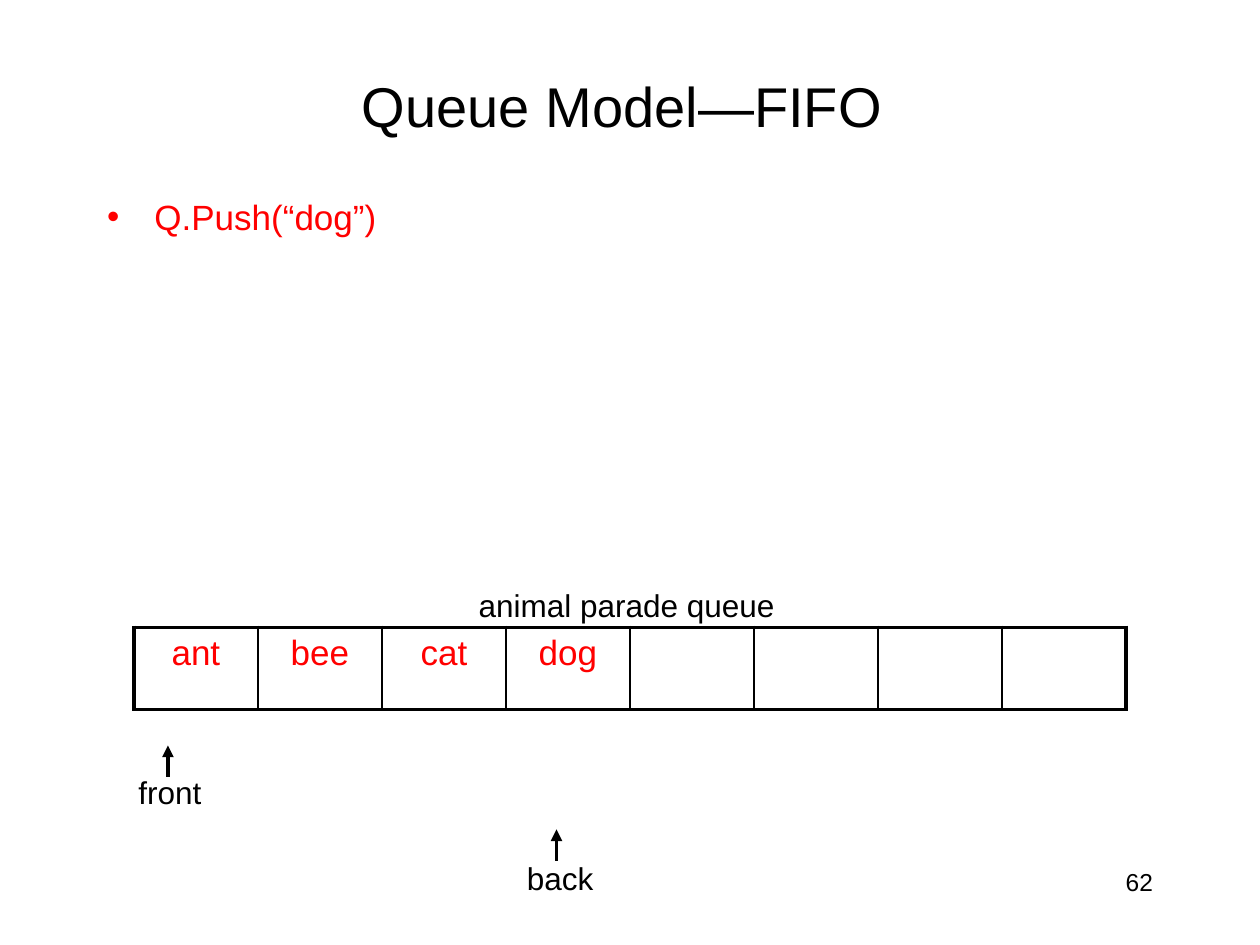
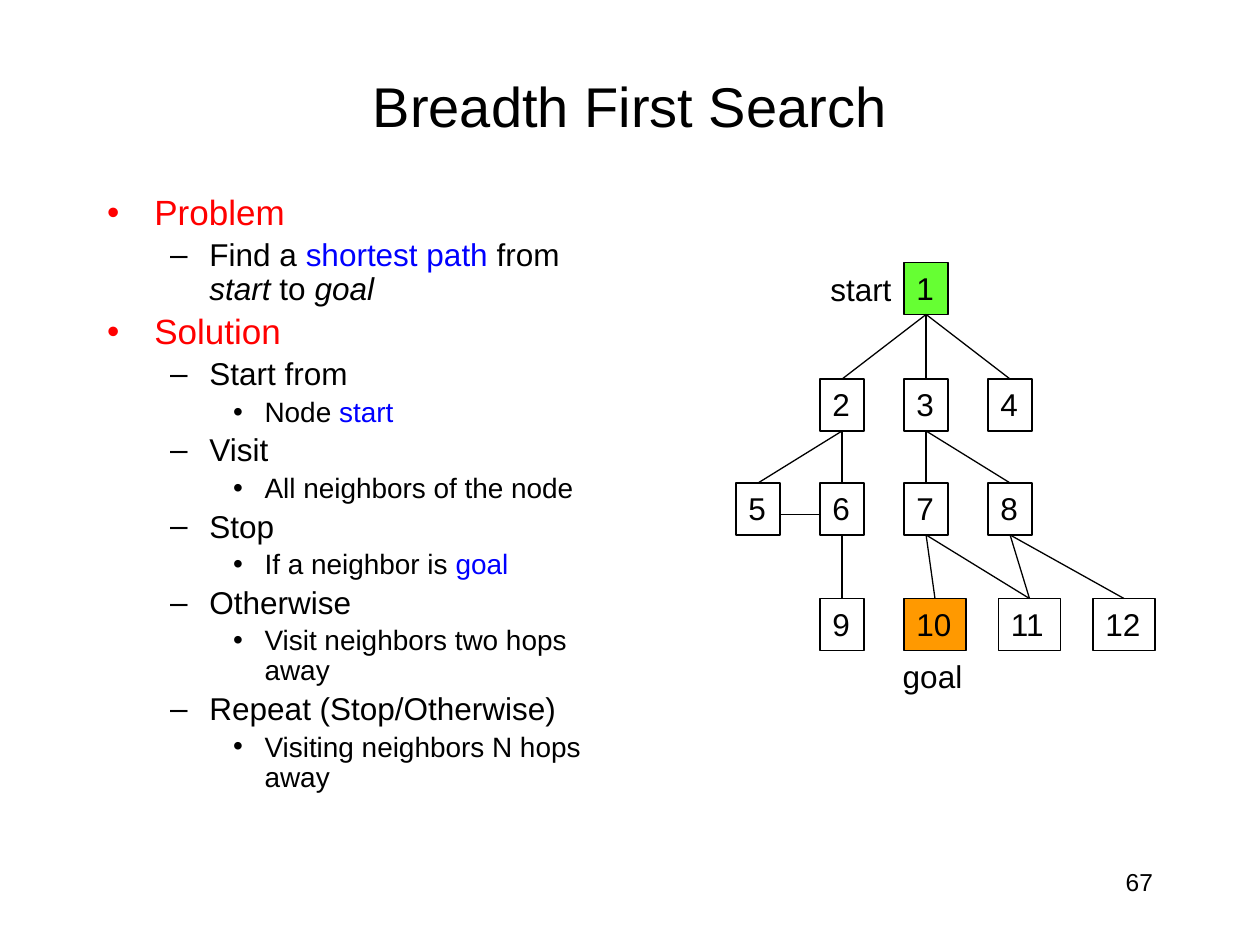
"""Build two lecture slides: a queue drawn as a row of cells and a breadth-first search tree."""
from dataclasses import dataclass

from lxml.etree import SubElement
from pptx import Presentation
from pptx.dml.color import RGBColor
from pptx.enum.shapes import MSO_CONNECTOR, MSO_SHAPE
from pptx.enum.text import MSO_ANCHOR, MSO_AUTO_SIZE, PP_ALIGN
from pptx.oxml.ns import qn
from pptx.util import Inches, Pt


@dataclass(frozen=True)
class Theme:
    font: str = "Arial"
    ink: str = "000000"
    accent: str = "FF0000"
    term: str = "0000FF"
    start: str = "66FF33"
    goal: str = "FF9900"
    title_size: int = 32
    levels: tuple = (20, 18, 16)
    label_size: int = 18
    number_size: int = 14
    thin: float = 0.75
    inner: float = 1
    thick: float = 2.25


theme = Theme()
prs = Presentation()
prs.slide_width, prs.slide_height = Inches(10), Inches(7.5)
COLUMNS = 120
unit = prs.slide_width / COLUMNS


def write(shape, box, text, size, align=PP_ALIGN.LEFT, wrap=False):
    """Place a shape on the grid and give it one styled paragraph."""
    shape.left, shape.top, shape.width, shape.height = [round(unit * side) for side in box]
    frame = shape.text_frame
    frame.text = text
    frame.word_wrap = wrap
    frame.auto_size = MSO_AUTO_SIZE.NONE if wrap else MSO_AUTO_SIZE.SHAPE_TO_FIT_TEXT
    paragraph = frame.paragraphs[0]
    paragraph.alignment = align
    font = paragraph.runs[0].font
    font.name, font.size = theme.font, Pt(size)
    font.color.rgb = RGBColor.from_string(theme.ink)


def draw_line(shapes, ends, weight, arrow=False):
    """Draw a straight line between two grid points."""
    line = shapes.add_connector(MSO_CONNECTOR.STRAIGHT, *[round(unit * end) for end in ends])
    line.line.color.rgb = RGBColor.from_string(theme.ink)
    line.line.width = Pt(weight)
    properties = line._element.spPr
    if arrow:
        SubElement(properties.find(qn("a:ln")), qn("a:tailEnd"), type="triangle")
    SubElement(properties, qn("a:effectLst"))
    return line


bullets = (("•", 4.5, 4.5), ("–", 9.75, 3.75), ("•", 15, 3))
lessons = [
    ("Queue Model—FIFO ", "62", (9, 18, 102, 30), 1.0, [
        (0, [("Q.Push(“dog”)", "")]),
    ]),
    ("Breadth First Search", "67", (9, 18, 48, 64), 0.9, [
        (0, [("Problem", "")]),
        (1, [("Find a ", ""), ("shortest path", "term"), (" from ", ""),
             ("start", "italic"), (" to ", ""), ("goal", "italic")]),
        (0, [("Solution", "")]),
        (1, [("Start from", "")]),
        (2, [("Node ", ""), ("start", "term")]),
        (1, [("Visit", "")]),
        (2, [("All neighbors of the node", "")]),
        (1, [("Stop", "")]),
        (2, [("If a neighbor is ", ""), ("goal", "term")]),
        (1, [("Otherwise", "")]),
        (2, [("Visit neighbors two hops away", "")]),
        (1, [("Repeat (Stop/Otherwise)", "")]),
        (2, [("Visiting neighbors N hops away", "")]),
    ]),
]

for title, number, body_box, spacing, outline in lessons:
    slide = prs.slides.add_slide(prs.slide_layouts[1])
    write(slide.shapes.title, (9, 5, 102, 10), title, theme.title_size, PP_ALIGN.CENTER, True)
    slide.shapes.title.text_frame.vertical_anchor = MSO_ANCHOR.MIDDLE
    page_number = slide.shapes.add_textbox(0, 0, 0, 0)
    write(page_number, (86, 82, 25, 6), number, theme.number_size, PP_ALIGN.RIGHT, True)

    body = slide.placeholders[1]
    body.left, body.top, body.width, body.height = [round(unit * side) for side in body_box]
    body.text_frame.auto_size = MSO_AUTO_SIZE.NONE
    for index, (level, pieces) in enumerate(outline):
        point = body.text_frame.add_paragraph() if index else body.text_frame.paragraphs[0]
        point.level, point.line_spacing = level, spacing
        mark, margin, hanging = bullets[level]
        settings = point._p.get_or_add_pPr()
        settings.set("marL", str(round(unit * margin)))
        settings.set("indent", str(round(-unit * hanging)))
        SubElement(settings, qn("a:buChar"), char=mark)
        for words, emphasis in pieces:
            run = point.add_run()
            run.text = words
            run.font.name, run.font.size = theme.font, Pt(theme.levels[level])
            plain = theme.ink if level else theme.accent
            run.font.color.rgb = RGBColor.from_string(theme.term if emphasis == "term" else plain)
            if emphasis == "italic":
                run.font.italic = True

queue_slide, search_slide = prs.slides

animals = ["ant", "bee", "cat", "dog"]
SLOTS = 8
queue_box = [round(unit * side) for side in (12.75, 59.75, 94.5, 7.8)]
queue = queue_slide.shapes.add_table(1, SLOTS, *queue_box).table
queue.first_row = queue.horz_banding = False
for slot, cell in enumerate(queue.rows[0].cells):
    edges = {
        "a:lnL": theme.inner if slot else theme.thick,
        "a:lnR": theme.inner if slot < SLOTS - 1 else theme.thick,
        "a:lnT": theme.thick,
        "a:lnB": theme.thick,
    }
    for edge, weight in edges.items():
        border = SubElement(cell._tc.get_or_add_tcPr(), qn(edge), w=str(Pt(weight)))
        SubElement(SubElement(border, qn("a:solidFill")), qn("a:srgbClr"), val=theme.ink)
    cell.fill.background()
    if slot < len(animals):
        cell.text = animals[slot]
        entry = cell.text_frame.paragraphs[0]
        entry.alignment = PP_ALIGN.CENTER
        font = entry.runs[0].font
        font.name, font.size = theme.font, Pt(theme.levels[0])
        font.color.rgb = RGBColor.from_string(theme.accent)

pointers = [("front", (12, 73, 8.4, 4.8), (16, 74)), ("back", (49, 81.2, 8.8, 4.8), (53, 82))]
for label, label_box, (column, row) in pointers:
    pointer = queue_slide.shapes.add_group_shape()
    write(pointer.shapes.add_textbox(0, 0, 0, 0), label_box, label, theme.label_size)
    draw_line(pointer.shapes, (column, row, column, row - 3), theme.thick, arrow=True)

captions = [
    (queue_slide, "animal parade queue", (44.4, 55.2, 30.6, 4.8)),
    (search_slide, "start", (77.9, 25.1, 8.4, 4.8)),
    (search_slide, "goal", (84.8, 62, 8.4, 4.8)),
]
for slide, caption, caption_box in captions:
    write(slide.shapes.add_textbox(0, 0, 0, 0), caption_box, caption, theme.label_size)

tree_rows = [
    (25, 86.1, 8, [1]),
    (36.1, 78.1, 8, [2, 3, 4]),
    (46, 70.1, 8, [5, 6, 7, 8]),
    (57, 78.1, 8, [9]),
    (57, 86.1, 9, [10, 11, 12]),
]
highlights = {1: theme.start, 10: theme.goal}
nodes = {}
for top, first_left, pitch, numbers in tree_rows:
    for place, number in enumerate(numbers):
        node = search_slide.shapes.add_shape(MSO_SHAPE.RECTANGLE, 0, 0, 0, 0)
        node_box = (first_left + pitch * place, top, 4.2 if number < 10 else 5.9, 4.95)
        write(node, node_box, str(number), theme.label_size)
        node.text_frame.vertical_anchor = MSO_ANCHOR.TOP
        node.shadow.inherit = False
        node.line.color.rgb = RGBColor.from_string(theme.ink)
        node.line.width = Pt(theme.thin)
        if number in highlights:
            node.fill.solid()
            node.fill.fore_color.rgb = RGBColor.from_string(highlights[number])
        else:
            node.fill.background()
        nodes[number] = node

children = {1: [3, 2, 4], 2: [5, 6], 3: [7, 8], 6: [9], 7: [10, 11], 8: [11, 12]}
for parent, branch in children.items():
    for child in branch:
        edge = draw_line(search_slide.shapes, (0, 0, 0, 0), theme.thin)
        edge.begin_connect(nodes[parent], 2)
        edge.end_connect(nodes[child], 0)
draw_line(search_slide.shapes, (74.3, 49, 78.1, 49), theme.thin)

prs.save("out.pptx")
